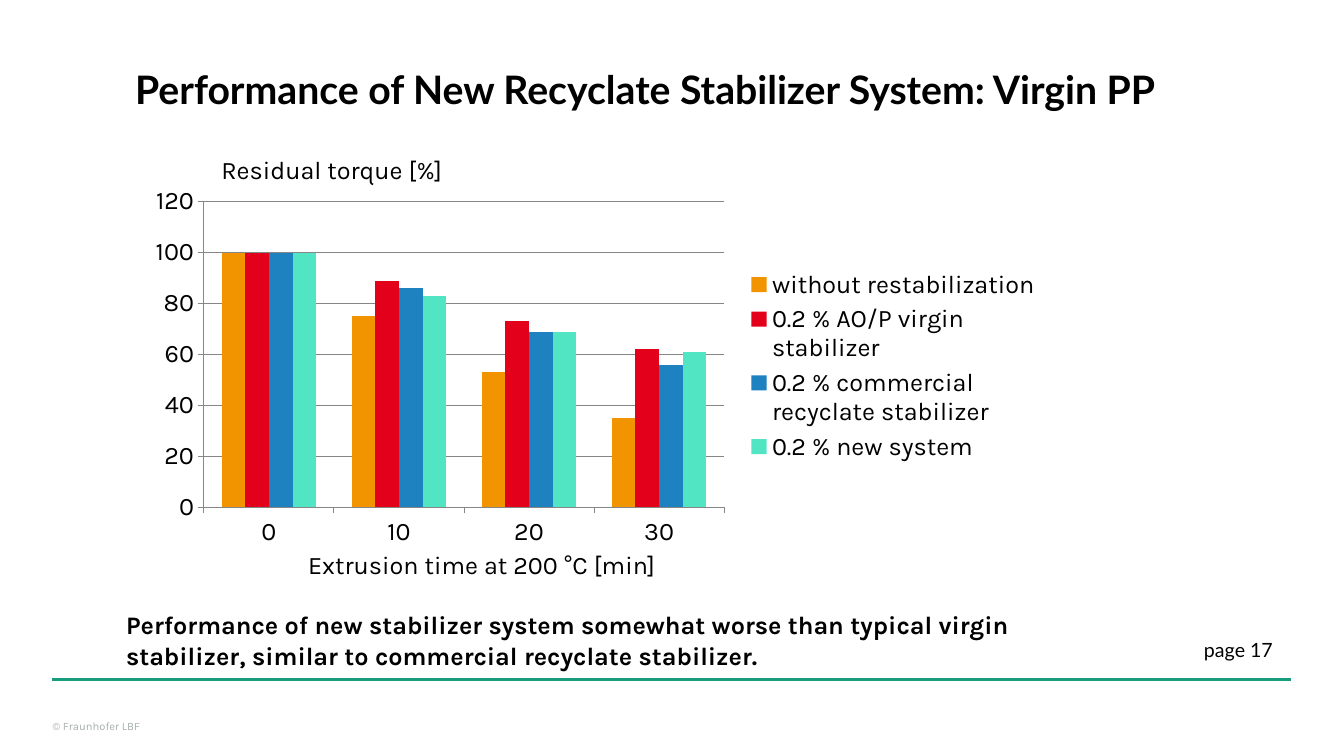
from dataclasses import dataclass

from lxml.etree import SubElement
from pptx import Presentation
from pptx.chart.data import CategoryChartData
from pptx.dml.color import RGBColor
from pptx.enum.chart import XL_CHART_TYPE as ChartType
from pptx.enum.chart import XL_LEGEND_POSITION as LegendPosition
from pptx.enum.chart import XL_TICK_MARK as TickMark
from pptx.enum.shapes import MSO_CONNECTOR as Connector
from pptx.enum.text import MSO_ANCHOR as Anchor
from pptx.oxml import parse_xml
from pptx.oxml.ns import nsdecls, qn
from pptx.util import Pt


@dataclass(frozen=True)
class Theme:
    heading_font: str = "Lato"
    body_font: str = "Karla"
    title_size: int = 28
    body_size: int = 18
    page_size: int = 14
    footer_size: int = 8
    text: str = "000000"
    muted: str = "A8AFAF"
    accent: str = "179C7D"
    grid: str = "868686"


THEME = Theme()

CATEGORIES = ["0", "10", "20", "30"]
# Series name, colour, residual torque in percent
TORQUE_SERIES = [
    ("without restabilization", "F29400", (100, 75, 53, 35)),
    ("0.2 % AO/P virgin stabilizer", "E2001A", (100, 89, 73, 62)),
    ("0.2 % commercial recyclate stabilizer", "1F82C0", (100, 86, 69, 56)),
    ("0.2 % new system", "52E5C3", (100, 83, 69, 61)),
]


def rgb(color):
    return RGBColor.from_string(color)


def add_text(slide, box, text, size=THEME.body_size, font=THEME.body_font,
             color=THEME.text, bold=False, inset=True, anchor=Anchor.TOP):
    shape = slide.shapes.add_textbox(*map(Pt, box))
    frame = shape.text_frame
    frame.word_wrap = True
    frame.vertical_anchor = anchor
    if not inset:
        frame.margin_left = frame.margin_right = Pt(0)
        frame.margin_top = frame.margin_bottom = Pt(0)
    run = frame.paragraphs[0].add_run()
    run.text = text
    run.font.size = Pt(size)
    run.font.name = font
    run.font.bold = bold
    run.font.color.rgb = rgb(color)


def add_rule(slide, left, right, y, width):
    line = slide.shapes.add_connector(Connector.STRAIGHT, Pt(left), Pt(y), Pt(right), Pt(y))
    line.line.color.rgb = rgb(THEME.accent)
    line.line.width = Pt(width)
    SubElement(line._element.spPr, qn("a:effectLst"))


def make_layout(x, y, width, height, inner=False):
    """Manual chart layout, in fractions of the chart's size."""
    target = '<c:layoutTarget val="inner"/>' if inner else ""
    sizes = "".join(f'<c:{tag} val="{value}"/>'
                    for tag, value in zip("xywh", (x, y, width, height)))
    return parse_xml(
        f'<c:layout {nsdecls("c")}><c:manualLayout>{target}'
        f'<c:xMode val="edge"/><c:yMode val="edge"/>{sizes}'
        "</c:manualLayout></c:layout>")


def style_axis(axis):
    axis.major_tick_mark = TickMark.OUTSIDE
    axis.minor_tick_mark = TickMark.NONE
    axis.format.line.color.rgb = rgb(THEME.grid)
    axis.format.line.width = Pt(0.75)


def add_torque_chart(slide, box):
    data = CategoryChartData()
    data.categories = CATEGORIES
    for name, _, values in TORQUE_SERIES:
        data.add_series(name, values)
    chart = slide.shapes.add_chart(ChartType.COLUMN_CLUSTERED, *map(Pt, box), data).chart
    chart.has_title = False
    chart.font.name = THEME.body_font
    chart.font.size = Pt(THEME.body_size)
    chart.font.color.rgb = rgb(THEME.text)

    # Columns
    plot = chart.plots[0]
    plot.gap_width = 150
    plot.overlap = 0
    plot.vary_by_categories = False
    for series, (_, color, _) in zip(plot.series, TORQUE_SERIES):
        series.format.fill.solid()
        series.format.fill.fore_color.rgb = rgb(color)

    # Axes
    style_axis(chart.category_axis)
    value_axis = chart.value_axis
    style_axis(value_axis)
    value_axis.minimum_scale = 0
    value_axis.maximum_scale = 120
    value_axis.major_unit = 20
    value_axis.has_major_gridlines = True
    gridline = value_axis.major_gridlines.format.line
    gridline.color.rgb = rgb(THEME.grid)
    gridline.width = Pt(0.75)

    # Legend and plot placement
    chart.has_legend = True
    legend = chart.legend
    legend.position = LegendPosition.RIGHT
    legend.include_in_layout = False
    legend_position = legend._element.find(qn("c:legendPos"))
    legend_position.addnext(make_layout(0.66, 0.23, 0.33, 0.54))
    plot_area = chart._chartSpace.chart.plotArea
    for layout in plot_area.findall(qn("c:layout")):
        plot_area.remove(layout)
    plot_area.insert(0, make_layout(0.07, 0.06, 0.57, 0.82, inner=True))


def main():
    presentation = Presentation()
    presentation.slide_width, presentation.slide_height = Pt(960), Pt(540)
    slide = presentation.slides.add_slide(presentation.slide_layouts[6])

    # Footer
    add_text(slide, (37.5, 514, 142, 10), "© Fraunhofer LBF", THEME.footer_size,
             color=THEME.muted, inset=False)
    add_rule(slide, 37.5, 922.5, 485.5, 2.5)
    add_text(slide, (860, 455, 58, 17.5), "page 17", THEME.page_size,
             THEME.heading_font, inset=False, anchor=Anchor.BOTTOM)

    # Title and conclusion
    add_text(slide, (89.5, 43, 808, 41),
             "Performance of New Recyclate Stabilizer System: Virgin PP",
             THEME.title_size, THEME.heading_font, bold=True)
    add_text(slide, (83, 432, 726, 51),
             "Performance of new stabilizer system somewhat worse than typical virgin "
             "stabilizer, similar to commercial recyclate stabilizer.", bold=True)

    # Chart with its axis captions
    add_torque_chart(slide, (100, 128, 652, 266.5))
    add_text(slide, (151, 106.5, 183, 29), "Residual torque [%]")
    add_text(slide, (213, 389, 272, 29), "Extrusion time at 200 °C [min]")

    presentation.save("out.pptx")


if __name__ == "__main__":
    main()
